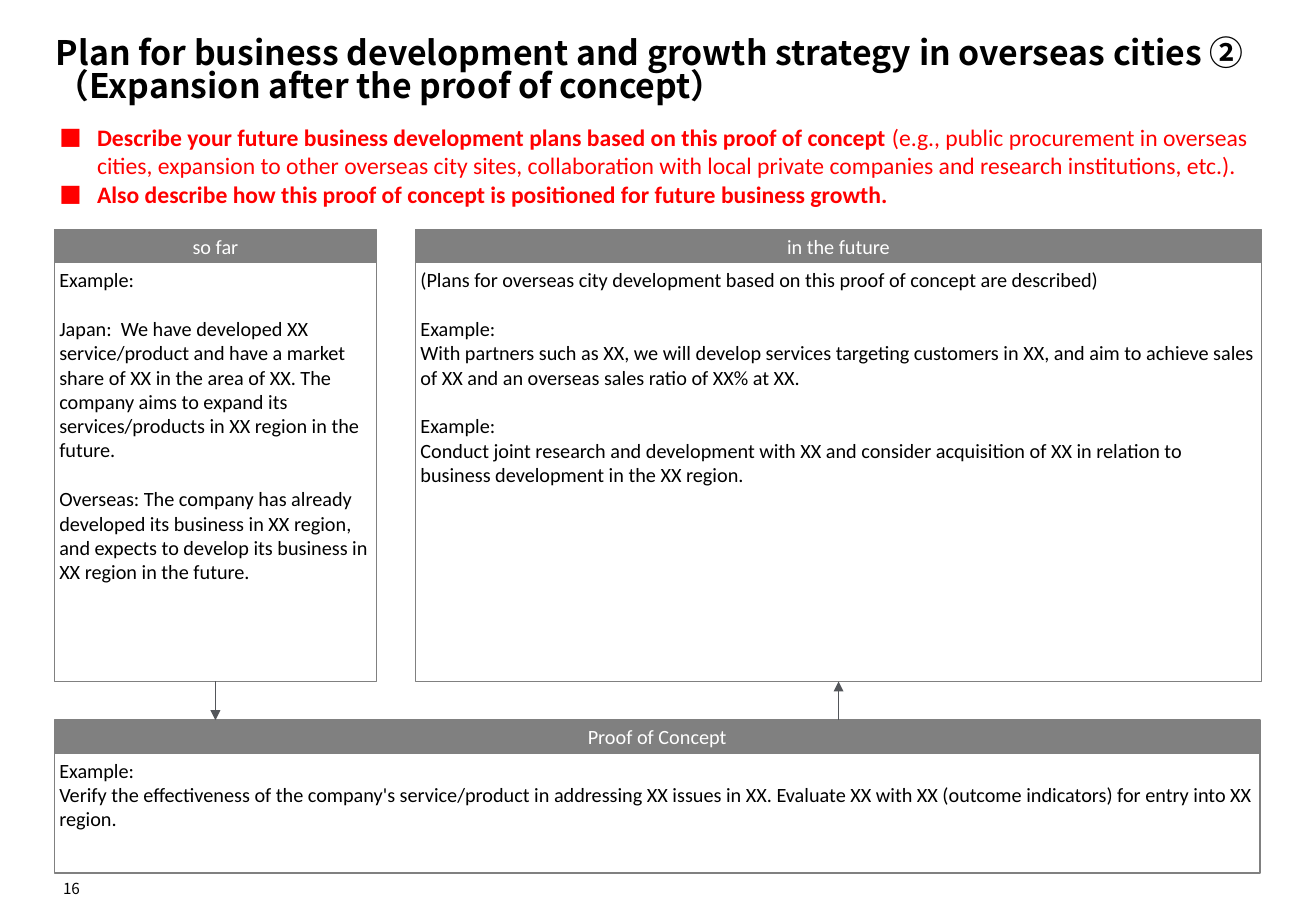
import pptx
import pptx.dml.color
import pptx.enum.shapes
import pptx.enum.text
import pptx.oxml.ns
import pptx.util
from lxml import etree

Cm = pptx.util.Cm
Pt = pptx.util.Pt
ALIGN = pptx.enum.text.PP_ALIGN
ANCHOR = pptx.enum.text.MSO_ANCHOR

COLORS = {"black": "000000", "white": "FFFFFF", "red": "FF0000",
          "gray": "808080", "arrow": "53565A"}
BODY_FONT = "Calibri"
TITLE_FONT = "Noto Sans CJK JP"
LEFT, WIDTH = 1.14, 25.2
HEADER_HEIGHT = 0.69
BLANK_LINE = Pt(14.6)

SO_FAR = [
    ["Example:"],
    ["Japan:  We have developed XX service/product and have a market share of XX in the "
     "area of XX. The company aims to expand its services/products in XX region in the future."],
    ["Overseas: The company has already developed its business in XX region, and expects "
     "to develop its business in XX region in the future."],
]
FUTURE = [
    ["(Plans for overseas city development based on this proof of concept are described)"],
    ["Example:",
     "With partners such as XX, we will develop services targeting customers in XX, and aim "
     "to achieve sales of XX and an overseas sales ratio of XX% at XX."],
    ["Example:",
     "Conduct joint research and development with XX and consider acquisition of XX in "
     "relation to business development in the XX region."],
]
PROOF = [
    ["Example:",
     "Verify the effectiveness of the company's service/product in addressing XX issues in XX. "
     "Evaluate XX with XX (outcome indicators) for entry into XX region."],
]
GUIDANCE = [
    [("Describe your future business development plans based on this proof of concept ", True),
     ("(e.g., public procurement in overseas cities, expansion to other overseas city sites, "
      "collaboration with local private companies and research institutions, etc.).", False)],
    [("Also describe how this proof of concept is positioned for future business growth.", True)],
]


def rgb(name):
    """Return the named colour."""
    return pptx.dml.color.RGBColor.from_string(COLORS[name])


def add_xml(parent, tag, **attributes):
    """Append a DrawingML element to its parent."""
    return etree.SubElement(parent, pptx.oxml.ns.qn(tag), **attributes)


def set_font(font, name, size, color, bold=False):
    """Apply typeface, size, colour and weight."""
    font.name = name
    font.size = Pt(size)
    font.bold = bold
    font.color.rgb = rgb(color)


def set_frame(frame, anchor, inset=0.0, wrap=True):
    """Set the anchor, margins and wrapping of a text frame."""
    frame.word_wrap = wrap
    frame.vertical_anchor = anchor
    frame.margin_left = frame.margin_right = Cm(inset)
    frame.margin_top = frame.margin_bottom = Cm(inset)


def add_text_frame(slide, box, anchor, inset=0.0, wrap=True):
    """Add a text box and return its frame."""
    frame = slide.shapes.add_textbox(*map(Cm, box)).text_frame
    set_frame(frame, anchor, inset, wrap)
    return frame


def add_title(slide, box):
    """Add the two-line slide title."""
    frame = add_text_frame(slide, box, ANCHOR.BOTTOM)
    title = frame.paragraphs[0]
    title.text = ("Plan for business development and growth strategy in overseas cities ②\v"
                  "（Expansion after the proof of concept）")
    title.line_spacing = 0.82
    set_font(title.font, TITLE_FONT, 20, "black", True)
    for run in title.runs:
        add_xml(run.font._element, "a:ea", typeface=TITLE_FONT)


def add_guidance(slide, box):
    """Add the bulleted instructions in red."""
    frame = add_text_frame(slide, box, ANCHOR.MIDDLE, 0.1)
    for index, parts in enumerate(GUIDANCE):
        item = frame.add_paragraph() if index else frame.paragraphs[0]
        properties = item._p.get_or_add_pPr()
        properties.set("marL", str(Cm(0.79)))
        properties.set("indent", str(-Cm(0.79)))
        add_xml(properties, "a:buFont", typeface=BODY_FONT)
        add_xml(properties, "a:buChar", char="■")
        set_font(item.font, BODY_FONT, 14, "red")
        for text, bold in parts:
            run = item.add_run()
            run.text = text
            run.font.bold = bold


def add_rectangle(slide, box, fill=None):
    """Add a gray-outlined rectangle."""
    rectangle = slide.shapes.add_shape(pptx.enum.shapes.MSO_SHAPE.RECTANGLE, *map(Cm, box))
    rectangle.shadow.inherit = False
    rectangle.line.color.rgb = rgb("gray")
    rectangle.line.width = Pt(1)
    if fill:
        rectangle.fill.solid()
        rectangle.fill.fore_color.rgb = rgb(fill)
    else:
        rectangle.fill.background()
    return rectangle


def add_panel(slide, box, heading, groups):
    """Add a headed panel of spaced paragraph groups and return its body."""
    left, top, width, height = box
    body = add_rectangle(slide, (left, top + HEADER_HEIGHT, width, height - HEADER_HEIGHT))
    set_frame(body.text_frame, ANCHOR.TOP, 0.1)
    for group_index, group in enumerate(groups):
        for index, text in enumerate(group):
            first = group_index == index == 0
            paragraph = body.text_frame.paragraphs[0] if first else body.text_frame.add_paragraph()
            paragraph.text = text
            paragraph.alignment = ALIGN.LEFT
            if group_index and index == 0:
                paragraph.space_before = BLANK_LINE
            set_font(paragraph.font, BODY_FONT, 12, "black")
    header = add_rectangle(slide, (left, top, width, HEADER_HEIGHT), "gray")
    set_frame(header.text_frame, ANCHOR.MIDDLE)
    label = header.text_frame.paragraphs[0]
    label.text = heading
    label.alignment = ALIGN.CENTER
    set_font(label.font, BODY_FONT, 12, "white")
    return body


def add_arrow(slide, panel, proof_top, upward):
    """Link the bottom of a panel with the proof panel below it."""
    center = panel.left + panel.width // 2
    ends = [(center, panel.top + panel.height), (center, Cm(proof_top))]
    start, end = reversed(ends) if upward else ends
    arrow = slide.shapes.add_connector(pptx.enum.shapes.MSO_CONNECTOR.STRAIGHT, *start, *end)
    if upward:
        arrow.end_connect(panel, 2)
    else:
        arrow.begin_connect(panel, 2)
    arrow.line.color.rgb = rgb("arrow")
    arrow.line.width = Pt(1)
    add_xml(arrow.line._get_or_add_ln(), "a:tailEnd", type="triangle")
    add_xml(arrow._element.spPr, "a:effectLst")


def add_page_number(slide, box):
    """Add the page number."""
    number = add_text_frame(slide, box, ANCHOR.BOTTOM, wrap=False).paragraphs[0]
    number.text = "16"
    number.alignment = ALIGN.RIGHT
    set_font(number.font, TITLE_FONT, 9, "black")


def main():
    """Build and save the slide."""
    deck = pptx.Presentation()
    deck.slide_width, deck.slide_height = Cm(27.51), Cm(19.05)
    slide = deck.slides.add_slide(deck.slide_layouts[6])
    panels_top, panels_height, proof_top = 4.8, 9.45, 15.06
    add_page_number(slide, (1.17, 18.29, 0.5, 0.48))
    add_title(slide, (1.17, 0.5, WIDTH, 1.7))
    add_guidance(slide, (LEFT, 2.82, WIDTH, 1.27))
    so_far = add_panel(slide, (LEFT, panels_top, 6.73, panels_height), "so far", SO_FAR)
    future = add_panel(slide, (8.69, panels_top, 17.68, panels_height), "in the future", FUTURE)
    add_panel(slide, (LEFT, proof_top, WIDTH, 3.2), "Proof of Concept", PROOF)
    add_arrow(slide, future, proof_top, True)
    add_arrow(slide, so_far, proof_top, False)
    deck.save("out.pptx")


if __name__ == "__main__":
    main()
